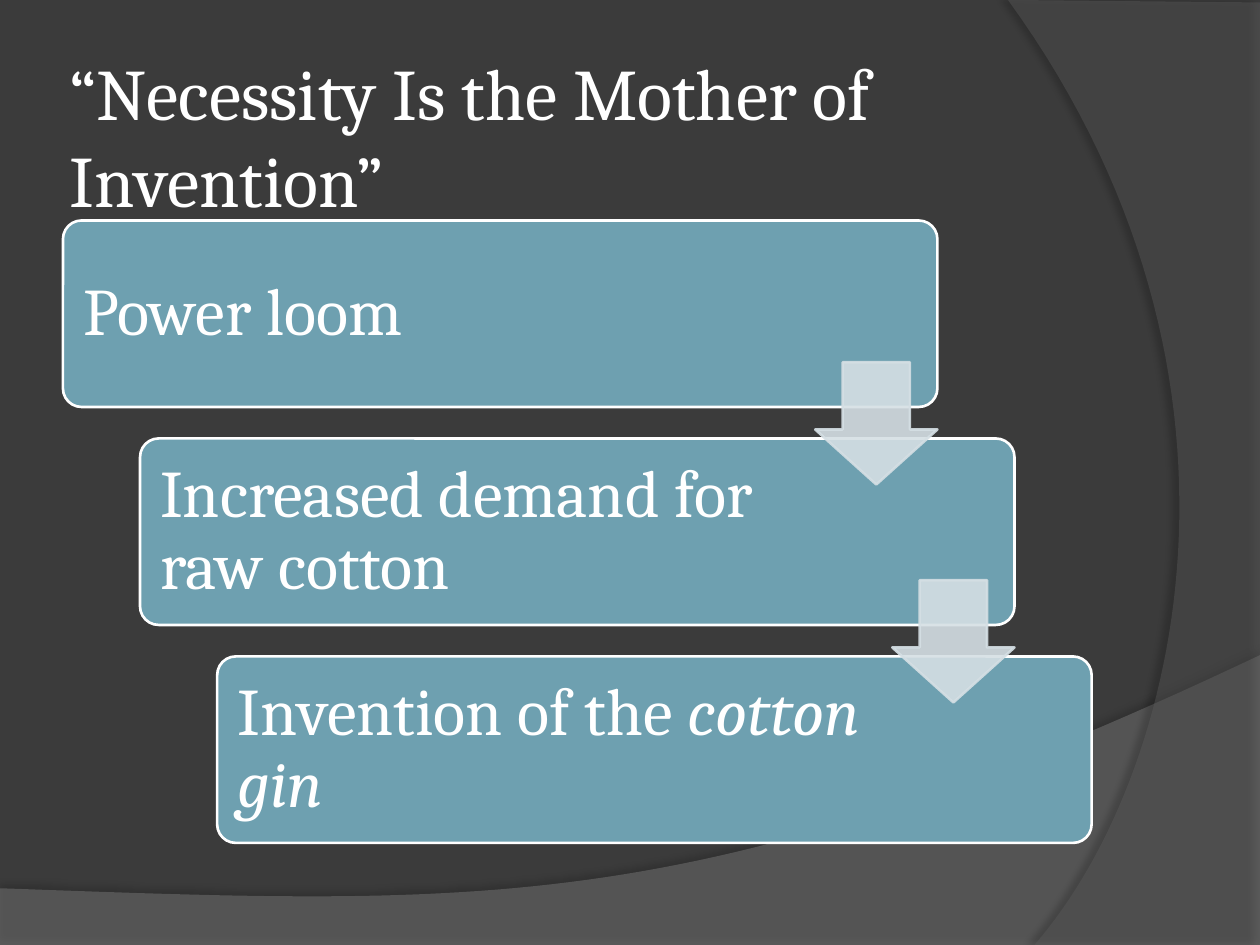
from lxml import etree
from pptx import Presentation
from pptx import util as u
from pptx.dml.color import RGBColor
from pptx.enum import shapes, text
from pptx.oxml.ns import qn

BACK = RGBColor(0x3B, 0x3B, 0x3B)
WAVE = RGBColor(0x7F, 0x7F, 0x7F)
ARC = RGBColor(0x5E, 0x5E, 0x5E)
WHITE = RGBColor(0xFF, 0xFF, 0xFF)
TEAL = RGBColor(0x6E, 0xA0, 0xB0)
PALE = RGBColor(0xD5, 0xDF, 0xE4)

COLS, ROWS = 100, 75  # grid cells over the whole slide
STEPS = [
    [("Power loom", False)],
    [("Increased demand for raw cotton", False)],
    [("Invention of the ", False), ("cotton gin", True)],
]


def curve(start, c1, c2, end, n=60):
    """Points along a cubic curve, without its start."""
    return [tuple((1 - t) ** 3 * a + 3 * (1 - t) ** 2 * t * b
                  + 3 * (1 - t) * t ** 2 * c + t ** 3 * d
                  for a, b, c, d in zip(start, c1, c2, end))
            for t in (i / n for i in range(1, n + 1))]


def add_text(p, words, size, font="Cambria", color=WHITE, italic=None):
    r = p.add_run()
    r.text = words
    r.font.size, r.font.name, r.font.italic = u.Pt(size), font, italic
    r.font.color.rgb = color


class Deck:
    def __init__(self, prs):
        self.cell = prs.slide_width / COLS
        self.slide = prs.slides.add_slide(prs.slide_layouts[5])
        self.slide.background.fill.solid()
        self.slide.background.fill.fore_color.rgb = BACK
        self.group = None

    def grid(self, *cells):
        return [u.Emu(round(c * self.cell)) for c in cells]

    def paint(self, sp, fill, line=None, opacity=100):
        sp.shadow.inherit = False
        sp.fill.solid()
        sp.fill.fore_color.rgb = fill
        if line is None:
            sp.line.fill.background()
        else:
            sp.line.color.rgb = line
            sp.line.width = u.Pt(1.5)
        if opacity < 100:
            for clr in sp._element.spPr.iter(qn("a:srgbClr")):
                etree.SubElement(clr, qn("a:alpha"), val=str(opacity * 1000))

    def frame(self, sp, inset):
        tf = sp.text_frame
        tf.word_wrap = True
        tf.auto_size = text.MSO_AUTO_SIZE.NONE
        tf.vertical_anchor = text.MSO_ANCHOR.MIDDLE
        tf.margin_left = tf.margin_right = u.Inches(inset)
        tf.margin_top = tf.margin_bottom = u.Inches(inset)
        p = tf.paragraphs[0]
        p.alignment = text.PP_ALIGN.LEFT
        return p

    def sweep(self, points, fill, opacity, shade, dist, angle):
        pts = [self.grid(*pt) for pt in points]
        fb = self.slide.shapes.build_freeform(*pts[0])
        fb.add_line_segments(pts[1:], close=True)
        sp = fb.convert_to_shape()
        self.paint(sp, fill, opacity=opacity)
        effects = sp._element.spPr.find(qn("a:effectLst"))
        shadow = etree.SubElement(
            effects, qn("a:outerShdw"), blurRad=str(u.Pt(4)),
            dist=str(u.Pt(dist)), dir=str(angle * 60000), rotWithShape="0")
        clr = etree.SubElement(shadow, qn("a:srgbClr"), val="000000")
        etree.SubElement(clr, qn("a:alpha"), val=str(shade * 1000))

    def title(self, words, *at):
        sp = self.slide.shapes.title
        sp.left, sp.top, sp.width, sp.height = self.grid(*at)
        add_text(self.frame(sp, 0.05), words, 41.4)
        self.slide.shapes._spTree.append(sp._element)  # above the sweeps

    def start_group(self):
        self.group = self.slide.shapes.add_group_shape()

    def shape(self, kind, at, adj, fill, line, opacity=100):
        sp = self.group.shapes.add_shape(kind, *self.grid(*at))
        for i, value in enumerate(adj):
            sp.adjustments[i] = value
        self.paint(sp, fill, line, opacity)

    def label(self, runs, *at):
        p = self.frame(self.group.shapes.add_textbox(*self.grid(*at)), 0.16)
        p.line_spacing = 0.9
        for words, italic in runs:
            add_text(p, words, 38, italic=italic)


def main():
    prs = Presentation()
    prs.slide_width, prs.slide_height = u.Inches(10), u.Inches(7.5)
    deck = Deck(prs)

    # Background sweeps
    deck.sweep([(0, 70.5), (0, 75), (100, 75), (100, 52)]
               + curve((100, 52), (55.9, 72.9), (39.1, 71.9), (0, 70.5)),
               WAVE, 45, shade=35, dist=3.5, angle=270)
    deck.sweep([(100, 0.2), (100, 75), (82.1, 75)]
               + curve((82.1, 75), (93.5, 61.9), (101.8, 30), (80, 0)),
               ARC, 40, shade=45, dist=4, angle=180)

    deck.title("“Necessity Is the Mother of Invention”", 5, 3, 81.7, 15.5)

    # Staircase of steps
    left, top, dx, dy = 5, 17.5, 6.12, 17.3
    width, height, arrow = 69.4, 14.8, 9.7
    deck.start_group()
    for i, runs in enumerate(STEPS):
        x, y = left + i * dx, top + i * dy
        deck.shape(shapes.MSO_SHAPE.ROUNDED_RECTANGLE, (x, y, width, height),
                   [0.1], TEAL, WHITE)
        deck.label(runs, x, y, 53.6 if i else 54.3, height)

    # Arrows from each step to the next
    for i in range(len(STEPS) - 1):
        x = left + i * dx + width - arrow
        deck.shape(shapes.MSO_SHAPE.DOWN_ARROW,
                   (x, top + 11.25 + i * dy, arrow, arrow),
                   [0.55, 0.45], PALE, PALE, opacity=90)

    prs.save("out.pptx")


if __name__ == "__main__":
    main()
